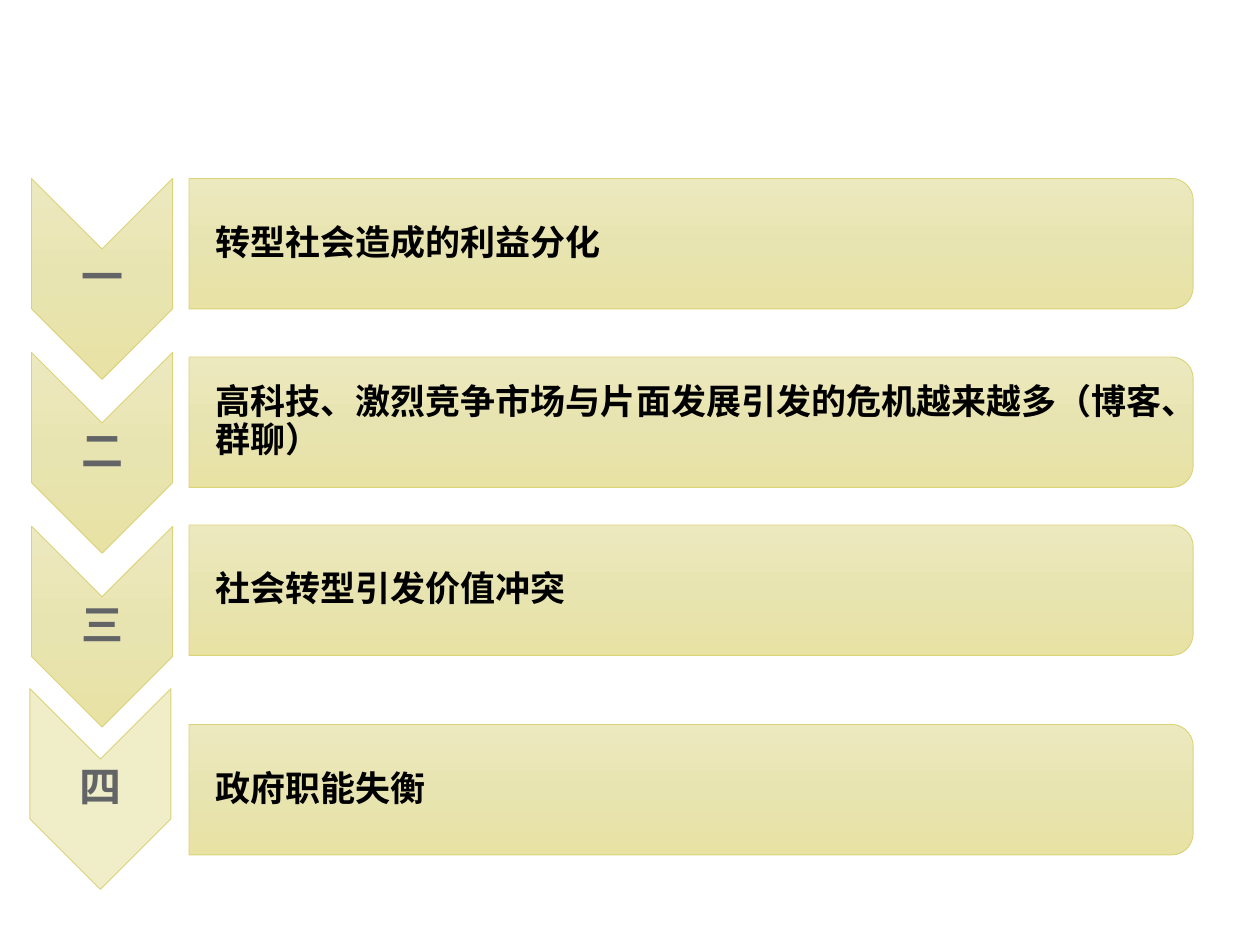
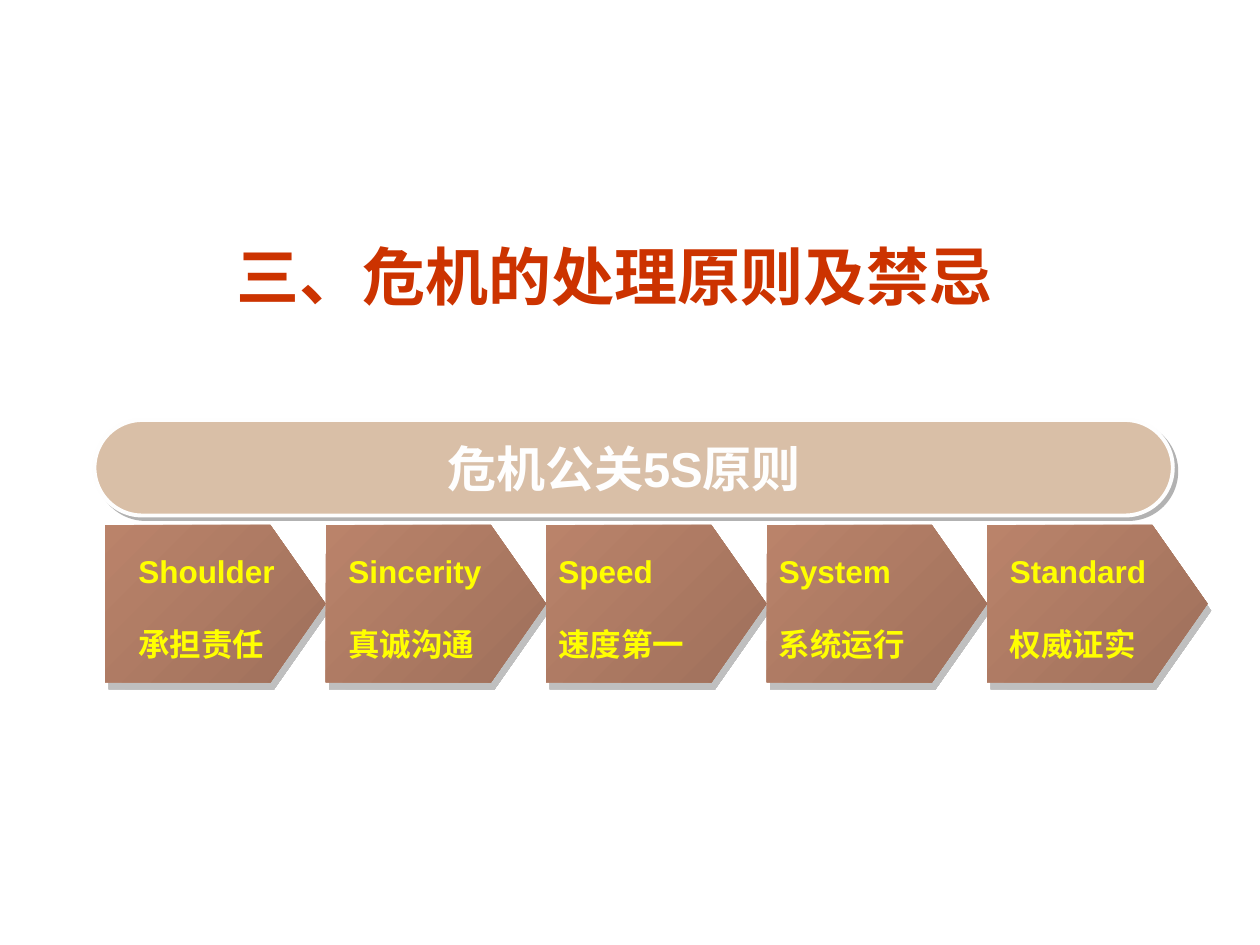
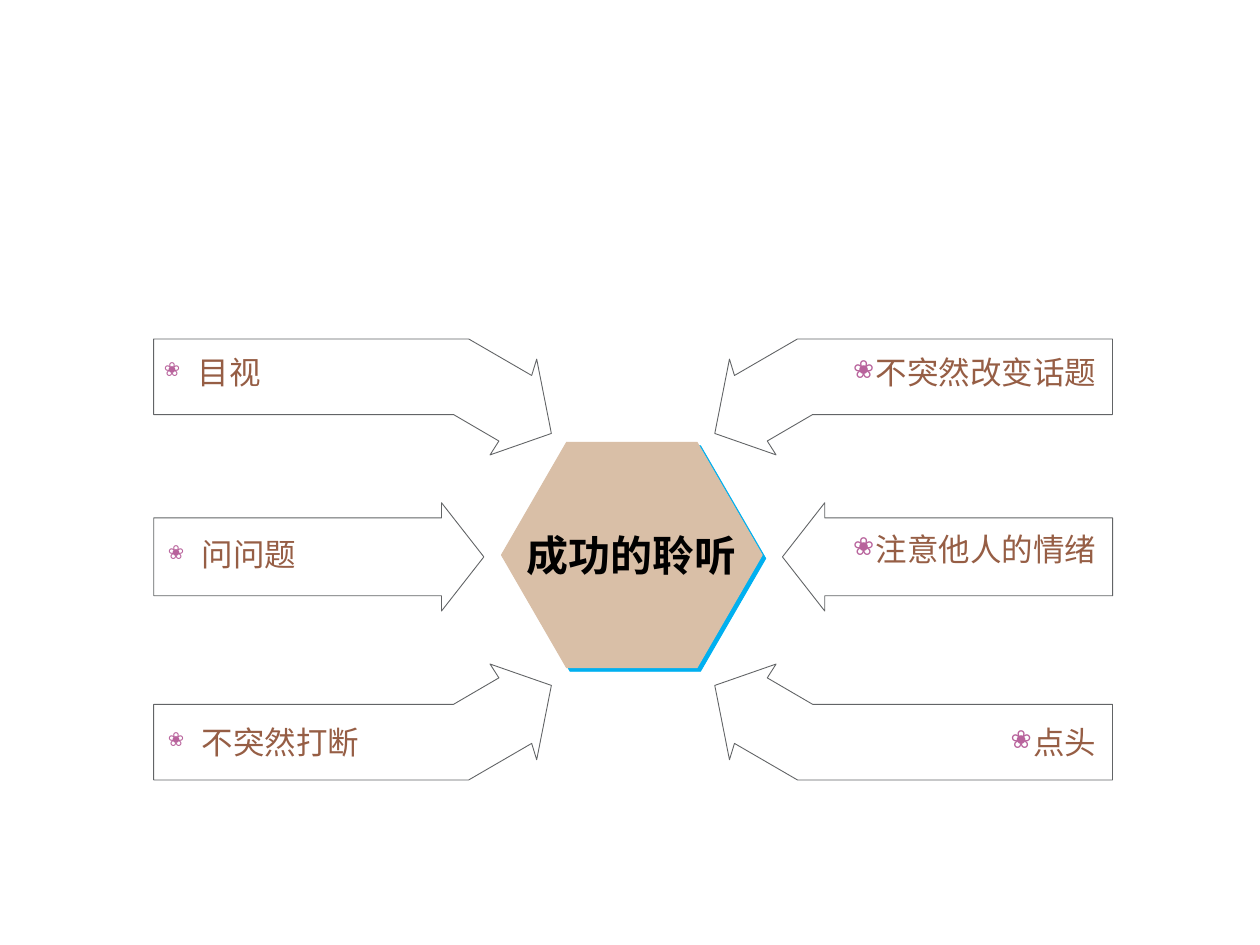
"""Build three crisis-communication slides: causes, 5S principles and listening."""
import math
from dataclasses import dataclass, replace
from typing import Any, Optional

import pptx
import pptx.dml.color
import pptx.enum.shapes
import pptx.enum.text
import pptx.oxml
import pptx.oxml.ns
import pptx.util
from lxml import etree

RGB = pptx.dml.color.RGBColor
SHAPE = pptx.enum.shapes.MSO_SHAPE
ALIGN = pptx.enum.text.PP_ALIGN
ANCHOR = pptx.enum.text.MSO_ANCHOR
FIT = pptx.enum.text.MSO_AUTO_SIZE
qn = pptx.oxml.ns.qn

BLACK = RGB(0x00, 0x00, 0x00)
SLATE = RGB(0x62, 0x64, 0x66)
OLIVE_EDGE = RGB(0xDA, 0xD3, 0x78)
PALE_OLIVE = RGB(0xF0, 0xED, 0xC9)
OLIVE = (RGB(0xED, 0xE9, 0xBF), RGB(0xE8, 0xE4, 0xB1), RGB(0xE8, 0xE2, 0xA4))
BROWN = (RGB(0xBA, 0x83, 0x6A), RGB(0x9F, 0x70, 0x5B))
TITLE_RED = RGB(0xCC, 0x33, 0x00)
SAND = RGB(0xD9, 0xBF, 0xA7)
NEAR_WHITE = RGB(0xFE, 0xFE, 0xFE)
YELLOW = RGB(0xFF, 0xFF, 0x00)
SKY = RGB(0x00, 0xB0, 0xF0)
LIGHT_GREY = RGB(0xB2, 0xB2, 0xB2)
MID_GREY = RGB(0x80, 0x80, 0x80)
SIENNA = RGB(0x96, 0x5E, 0x45)
ORCHID = RGB(0xB8, 0x63, 0x9C)

SLIDE_WIDTH = pptx.util.Inches(10)
SLIDE_HEIGHT = pptx.util.Inches(7.5)
COLUMN = SLIDE_WIDTH / 120
ROW = SLIDE_HEIGHT / 90
CJK_FONT = "Noto Sans CJK SC"
Point = tuple[float, float]


@dataclass(frozen=True)
class Cells:
    """A box on the grid, in columns and rows."""
    left: float
    top: float
    width: float
    height: float

    def emu(self) -> tuple[int, int, int, int]:
        """Return left, top, width and height in EMU."""
        return (round(self.left * COLUMN), round(self.top * ROW),
                round(self.width * COLUMN), round(self.height * ROW))


@dataclass(frozen=True)
class Shadow:
    """An offset shadow."""
    color: RGB
    opacity: int
    distance: float
    angle: int


@dataclass(frozen=True)
class Look:
    """Fill colours, outline and shadow of a shape."""
    fill: tuple[RGB, ...] = ()
    angle: int = 90
    line: Optional[RGB] = None
    line_width: float = 0.5
    shadow: Optional[Shadow] = None


@dataclass(frozen=True)
class Lettering:
    """Character and paragraph format of a text."""
    size: float
    color: RGB
    bold: bool = True
    face: str = "Arial"
    align: Any = ALIGN.LEFT
    line_spacing: float = 1.0
    gap: float = 0
    bullet_percent: int = 0
    indent: float = 0


@dataclass(frozen=True)
class Cause:
    """A numbered cause with its chevron and bar places."""
    numeral: str
    text: str
    chevron_left: float
    chevron_top: float
    bar_top: float
    chevron_fill: tuple[RGB, ...] = OLIVE


@dataclass(frozen=True)
class Principle:
    """One of the 5S principles."""
    english: str
    chinese: str
    text_left: float


@dataclass(frozen=True)
class Habit:
    """A listening habit beside an arrow."""
    text: str
    left: float
    top: float
    lettering: Lettering


OLIVE_LOOK = Look(OLIVE, line=OLIVE_EDGE)
PLATE_LOOK = Look(BROWN, 45, shadow=Shadow(MID_GREY, 50, 4.5, 63))
PILL_LOOK = Look((SAND,), line=NEAR_WHITE, line_width=2.25,
                 shadow=Shadow(LIGHT_GREY, 100, 2.8, 45))
HEXAGON_LOOK = Look((SAND,), line=SAND, shadow=Shadow(SKY, 100, 2.8, 45))
ARROW_LOOK = Look(line=SLATE)

NUMERAL = Lettering(24, SLATE, face=CJK_FONT, align=ALIGN.CENTER, line_spacing=0.9)
CAUSE = Lettering(20, BLACK, line_spacing=0.9)
TITLE = Lettering(36, TITLE_RED, align=ALIGN.CENTER)
HEADING = Lettering(28, NEAR_WHITE, align=ALIGN.CENTER)
PRINCIPLE = Lettering(18, YELLOW, gap=20)
CORE = Lettering(24, BLACK, align=ALIGN.CENTER)
LEFT_HABIT = Lettering(18, SIENNA, False, "Calibri", line_spacing=0.9,
                       bullet_percent=62, indent=0.27)
RIGHT_HABIT = replace(LEFT_HABIT, align=ALIGN.RIGHT, bullet_percent=80, indent=0.18)

CHEVRON_PITCH = 16.56
CAUSES = (
    Cause("一", "转型社会造成的利益分化", 3, 17, 17),
    Cause("二", "高科技、激烈竞争市场与片面发展引发的危机越来越多（博客、群聊）",
          3, 17 + CHEVRON_PITCH, 34),
    Cause("三", "社会转型引发价值冲突", 3, 17 + 2 * CHEVRON_PITCH, 50),
    Cause("四", "政府职能失衡", 2.84, 65.58, 69, (PALE_OLIVE,)),
)
PRINCIPLES = (
    Principle("Shoulder", "承担责任", 12),
    Principle("Sincerity", "真诚沟通", 32),
    Principle("Speed", "速度第一", 52),
    Principle("System", "系统运行", 73),
    Principle("Standard", "权威证实", 95),
)
HABITS = (
    Habit("目视", 15.6, 34, LEFT_HABIT),
    Habit("问问题", 16, 51.4, LEFT_HABIT),
    Habit("不突然打断", 16, 69.25, LEFT_HABIT),
    Habit("不突然改变话题", 76.1, 34, RIGHT_HABIT),
    Habit("注意他人的情绪", 76.1, 50.9, RIGHT_HABIT),
    Habit("点头", 76.1, 69.25, RIGHT_HABIT),
)
BENT_ARROW = ((14.64, 39.48), (43.2, 39.48), (47.52, 42), (46.68, 43.32),
              (52.52, 41.28), (51.12, 34.2), (50.64, 35.76), (44.64, 32.28),
              (14.64, 32.28))
MIRROR_X, MIRROR_Y = 120.6, 106.56


def add_color(parent: Any, color: RGB) -> Any:
    """Append a colour element and return it."""
    return etree.SubElement(parent, qn("a:srgbClr"), val=str(color))


def add_shadow(effects: Any, shadow: Shadow) -> None:
    """Append an outer shadow to an effect list."""
    outer = etree.SubElement(
        effects, qn("a:outerShdw"), blurRad="0", dist=str(pptx.util.Pt(shadow.distance)),
        dir=str(shadow.angle * 60000), algn="ctr", rotWithShape="0")
    etree.SubElement(add_color(outer, shadow.color), qn("a:alpha"),
                     val=str(shadow.opacity * 1000))


def paint(shape: Any, look: Look) -> None:
    """Apply fill, outline and shadow."""
    if not look.fill:
        shape.fill.background()
    elif len(look.fill) == 1:
        shape.fill.solid()
        shape.fill.fore_color.rgb = look.fill[0]
    else:
        shape.fill.gradient()
        shape.fill.gradient_angle = 360 - look.angle
        stops = shape._element.spPr.find(".//" + qn("a:gsLst"))
        for stop in list(stops):
            stops.remove(stop)
        for index, color in enumerate(look.fill):
            place = round(100000 * index / (len(look.fill) - 1))
            add_color(etree.SubElement(stops, qn("a:gs"), pos=str(place)), color)
    if look.line is None:
        shape.line.fill.background()
    else:
        shape.line.color.rgb = look.line
        shape.line.width = pptx.util.Pt(look.line_width)
    shape.shadow.inherit = False
    if look.shadow:
        add_shadow(shape._element.spPr.find(qn("a:effectLst")), look.shadow)


def add_bullet(paragraph: Any, lettering: Lettering) -> None:
    """Give a paragraph a hanging flower bullet."""
    properties = paragraph._p.get_or_add_pPr()
    hang = pptx.util.Inches(lettering.indent)
    properties.set("marL", str(hang))
    properties.set("indent", str(-hang))
    add_color(etree.SubElement(properties, qn("a:buClr")), ORCHID)
    etree.SubElement(properties, qn("a:buSzPct"), val=str(lettering.bullet_percent * 1000))
    etree.SubElement(properties, qn("a:buChar"), char="❀")


def write(shape: Any, lines: tuple[str, ...], lettering: Lettering,
          insets: tuple[float, float, float, float] = (0.1, 0.05, 0.1, 0.05),
          **settings: Any) -> None:
    """Fill a shape with formatted paragraphs; insets run left, top, right, bottom."""
    frame = shape.text_frame
    sides = ("margin_left", "margin_top", "margin_right", "margin_bottom")
    margins = dict(zip(sides, map(pptx.util.Inches, insets)))
    for name, value in {"word_wrap": True, **margins, **settings}.items():
        setattr(frame, name, value)
    for index, line in enumerate(lines):
        paragraph = frame.add_paragraph() if index else frame.paragraphs[0]
        if lettering.bullet_percent:
            add_bullet(paragraph, lettering)
        paragraph.alignment = lettering.align
        paragraph.line_spacing = lettering.line_spacing
        paragraph.space_before = pptx.util.Pt(lettering.gap if index else 0)
        run = paragraph.add_run()
        run.text = line
        run.font.color.rgb = lettering.color
        for name, value in {"size": pptx.util.Pt(lettering.size), "bold": lettering.bold,
                            "name": lettering.face}.items():
            setattr(run.font, name, value)
        latin = run._r.rPr.find(qn("a:latin"))
        latin.addnext(latin.makeelement(qn("a:ea"), {"typeface": CJK_FONT}))


def add_preset(slide: Any, kind: Any, cells: Cells, look: Look, *adjustments: float) -> Any:
    """Add a painted preset shape."""
    shape = slide.shapes.add_shape(kind, *cells.emu())
    for index, value in enumerate(adjustments):
        shape.adjustments[index] = value
    paint(shape, look)
    return shape


def add_outline(slide: Any, points: list[Point], look: Look) -> Any:
    """Add a painted closed outline through grid points."""
    start, *rest = [(round(x * COLUMN), round(y * ROW)) for x, y in points]
    builder = slide.shapes.build_freeform(*start)
    builder.add_line_segments(rest, close=True)
    shape = builder.convert_to_shape()
    paint(shape, look)
    return shape


def chevron_points(left: float, top: float) -> list[Point]:
    """Return the outline of a downward chevron."""
    width, side, depth = 13.44, 12.4, 6.72
    middle, right = left + width / 2, left + width
    return [(right, top), (right, top + side), (middle, top + side + depth),
            (left, top + side), (left, top), (middle, top + depth)]


def bar_points(top: float) -> list[Point]:
    """Return the outline of a bar with rounded right corners."""
    left, right, height, radius = 18, 113.64, 12.42, 2.07
    points: list[Point] = [(left, top)]
    for first, center_y in ((-90, top + radius), (0, top + height - radius)):
        for degrees in range(first, first + 91, 10):
            turn = math.radians(degrees)
            points.append((right - radius + radius * math.cos(turn),
                           center_y + radius * math.sin(turn)))
    return points + [(left, top + height)]


def build_causes(slide: Any) -> None:
    """Draw the numbered causes."""
    for cause in CAUSES:
        chevron = add_outline(slide, chevron_points(cause.chevron_left, cause.chevron_top),
                              replace(OLIVE_LOOK, fill=cause.chevron_fill))
        write(chevron, (cause.numeral,), NUMERAL, (0.02, 0.58, 0.02, 0.58),
              vertical_anchor=ANCHOR.MIDDLE)
        bar = add_outline(slide, bar_points(cause.bar_top), OLIVE_LOOK)
        write(bar, (cause.text,), CAUSE, (0.21, 0.07, 0.07, 0.07),
              vertical_anchor=ANCHOR.MIDDLE)


def build_principles(slide: Any) -> None:
    """Draw the title, heading and five principles."""
    title = slide.shapes.title
    title.left, title.top, title.width, title.height = Cells(14, 22, 89, 8.4).emu()
    write(title, ("三、危机的处理原则及禁忌",), TITLE,
          vertical_anchor=ANCHOR.TOP, auto_size=FIT.SHAPE_TO_FIT_TEXT)
    color = title.text_frame.paragraphs[0].runs[0]._r.rPr.find(qn("a:solidFill"))
    effects = color.makeelement(qn("a:effectLst"), {})
    color.addnext(effects)
    add_shadow(effects, Shadow(LIGHT_GREY, 100, 1.5, 45))

    pill = add_preset(slide, SHAPE.ROUNDED_RECTANGLE, Cells(9, 40, 102.7, 9.1),
                      PILL_LOOK, 0.5)
    write(pill, ("危机公关5S原则",), HEADING, (0.1, 0.05, 0.25, 0.05),
          vertical_anchor=ANCHOR.MIDDLE)
    for index in range(len(PRINCIPLES)):
        add_preset(slide, SHAPE.PENTAGON, Cells(10 + 21 * index, 50, 21, 15),
                   PLATE_LOOK, 0.35)
    for principle in PRINCIPLES:
        label = slide.shapes.add_textbox(*Cells(principle.text_left, 52, 17, 12).emu())
        write(label, (principle.english, principle.chinese), PRINCIPLE)


def build_listening(slide: Any) -> None:
    """Draw the listening hexagon, its arrows and habits."""
    hexagon = add_preset(slide, SHAPE.HEXAGON, Cells(47.76, 42.12, 24.84, 21.48),
                         HEXAGON_LOOK, 0.289, 1.155)
    write(hexagon, ("成功的聆听",), CORE, (0, 0, 0, 0), word_wrap=False,
          vertical_anchor=ANCHOR.MIDDLE)
    for below in (False, True):
        for mirrored in (False, True):
            points = [(MIRROR_X - x if mirrored else x, MIRROR_Y - y if below else y)
                      for x, y in BENT_ARROW]
            add_outline(slide, points, ARROW_LOOK)
    for kind, left in ((SHAPE.RIGHT_ARROW, 14.64), (SHAPE.LEFT_ARROW, 74.52)):
        add_preset(slide, kind, Cells(left, 47.88, 31.44, 10.32), ARROW_LOOK, 0.718, 0.391)
    for habit in HABITS:
        label = slide.shapes.add_textbox(*Cells(habit.left, habit.top, 28.3, 3.24).emu())
        write(label, (habit.text,), habit.lettering, (0, 0, 0, 0),
              vertical_anchor=ANCHOR.MIDDLE, auto_size=FIT.SHAPE_TO_FIT_TEXT)


def main() -> None:
    """Build and save the presentation."""
    deck = pptx.Presentation()
    deck.slide_width, deck.slide_height = SLIDE_WIDTH, SLIDE_HEIGHT
    title_only, blank = deck.slide_layouts[5], deck.slide_layouts[6]
    for layout, build in ((blank, build_causes), (title_only, build_principles),
                          (blank, build_listening)):
        build(deck.slides.add_slide(layout))
    deck.save("out.pptx")


if __name__ == "__main__":
    main()
